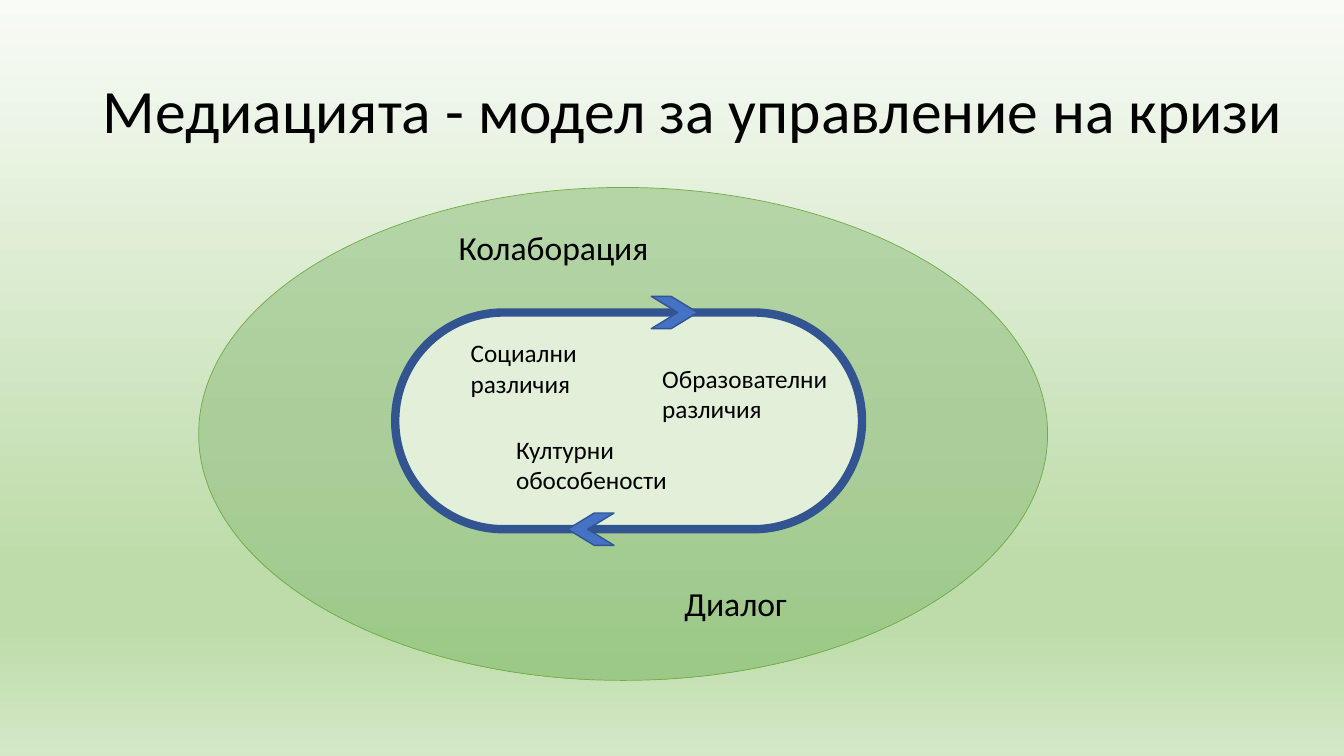
from dataclasses import dataclass

from lxml.etree import SubElement
from pptx import Presentation
from pptx.dml.color import RGBColor
from pptx.dml.fill import FillFormat
from pptx.enum.shapes import MSO_SHAPE as Preset
from pptx.enum.text import MSO_ANCHOR as Anchor
from pptx.oxml.ns import qn
from pptx.oxml.xmlchemy import BaseOxmlElement as XmlElement
from pptx.shapes.autoshape import Shape
from pptx.slide import Slide
from pptx.util import Inches, Pt

Box = tuple[float, float, float, float]
Stops = tuple[tuple[int, str], ...]


@dataclass(frozen=True)
class Theme:
    font: str = "Calibri"
    text: str = "000000"
    title_size: int = 44
    process_size: int = 24
    difference_size: int = 18
    oval_line: str = "70AD47"
    track_fill: str = "E2F0D9"
    track_line: str = "325491"
    arrow_fill: str = "4472C4"
    backdrop: Stops = ((0, "F8FBF6"), (74, "BEDCAA"), (83, "BEDCAA"), (100, "D4E8C6"))
    oval: Stops = ((0, "B5D5A7"), (50, "AACE9A"), (100, "9CC987"))


@dataclass(frozen=True)
class Label:
    text: str
    box: Box
    size: int
    anchor: Anchor = Anchor.TOP
    line_spacing: float = 1.0


@dataclass(frozen=True)
class Arrow:
    left: float
    top: float
    rotation: int


THEME = Theme()
ARROW_WIDTH, ARROW_HEIGHT = 0.46, 0.32

LABELS = (
    Label("Медиацията - модел за управление на кризи", (0.92, 0.4, 12.06, 1.45),
          THEME.title_size, Anchor.MIDDLE, 0.9),
    Label("Социални различия", (4.57, 3.3, 1.29, 0.71), THEME.difference_size),
    Label("Културни обособености", (5.02, 4.26, 1.83, 0.71), THEME.difference_size),
    Label("Образователни различия", (6.47, 3.55, 1.87, 0.71), THEME.difference_size),
    Label("Колаборация", (4.45, 2.2, 2.2, 0.5), THEME.process_size),
    Label("Диалог", (6.69, 5.73, 2.2, 0.5), THEME.process_size),
)
ARROWS = (Arrow(6.46, 2.94, 0), Arrow(5.63, 5.09, 180))


def apply_gradient(fill: FillFormat, owner: XmlElement, stops: Stops) -> None:
    """Fill from top to bottom; owner is the XML element that holds the fill."""
    fill.gradient()
    fill.gradient_angle = 270
    stop_list = owner.find(f".//{qn('a:gsLst')}")
    for old_stop in list(stop_list):
        stop_list.remove(old_stop)
    for percent, color in stops:
        stop = SubElement(stop_list, qn("a:gs"), pos=str(percent * 1000))
        SubElement(stop, qn("a:srgbClr"), val=color)


def add_outlined(slide: Slide, preset: Preset, box: Box, line: str, width: float) -> Shape:
    shape = slide.shapes.add_shape(preset, *map(Inches, box))
    shape.shadow.inherit = False
    shape.line.color.rgb = RGBColor.from_string(line)
    shape.line.width = Pt(width)
    return shape


def fill_solid(shape: Shape, color: str) -> None:
    shape.fill.solid()
    shape.fill.fore_color.rgb = RGBColor.from_string(color)


def add_oval(slide: Slide) -> None:
    oval = add_outlined(slide, Preset.OVAL, (1.97, 1.86, 8.42, 4.89), THEME.oval_line, 0.5)
    apply_gradient(oval.fill, oval._element.spPr, THEME.oval)


def add_track(slide: Slide) -> None:
    track = add_outlined(slide, Preset.ROUNDED_RECTANGLE, (3.92, 3.1, 4.63, 2.15),
                         THEME.track_line, 6)
    track.adjustments[0] = 0.5
    fill_solid(track, THEME.track_fill)


def add_arrow(slide: Slide, arrow: Arrow) -> None:
    chevron = add_outlined(slide, Preset.CHEVRON,
                           (arrow.left, arrow.top, ARROW_WIDTH, ARROW_HEIGHT),
                           THEME.track_line, 1)
    chevron.adjustments[0] = 0.82
    chevron.rotation = arrow.rotation
    fill_solid(chevron, THEME.arrow_fill)


def add_label(slide: Slide, label: Label) -> None:
    frame = slide.shapes.add_textbox(*map(Inches, label.box)).text_frame
    frame.word_wrap = True
    frame.vertical_anchor = label.anchor
    frame.text = label.text
    paragraph = frame.paragraphs[0]
    paragraph.line_spacing = label.line_spacing
    font = paragraph.runs[0].font
    font.name = THEME.font
    font.size = Pt(label.size)
    font.color.rgb = RGBColor.from_string(THEME.text)


def main() -> None:
    deck = Presentation()
    deck.slide_width, deck.slide_height = Inches(13.33), Inches(7.5)
    slide = deck.slides.add_slide(deck.slide_layouts[6])
    apply_gradient(slide.background.fill, slide._element, THEME.backdrop)
    add_oval(slide)
    add_track(slide)
    for arrow in ARROWS:
        add_arrow(slide, arrow)
    for label in LABELS:
        add_label(slide, label)
    deck.save("out.pptx")


if __name__ == "__main__":
    main()
